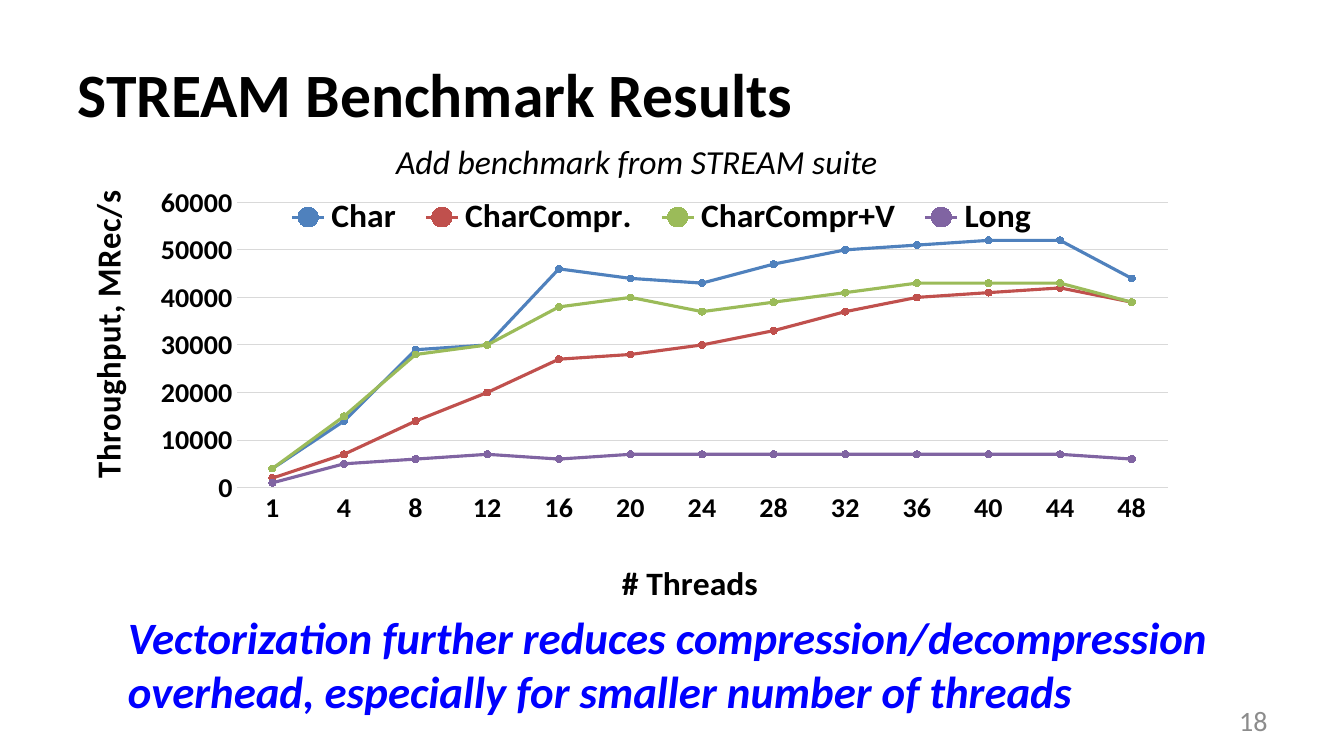
from lxml import etree
from pptx import Presentation
from pptx import util as u
from pptx.chart.data import CategoryChartData
from pptx.dml.color import RGBColor
from pptx.enum import chart as ch
from pptx.enum import text
from pptx.oxml.ns import qn

FONT = "Calibri"
BLACK = RGBColor(0, 0, 0)
BLUE = RGBColor(0, 0, 255)
GRAY = RGBColor(0x8C, 0x8C, 0x8C)
GRID = RGBColor(0xD9, 0xD9, 0xD9)

TITLE = "STREAM Benchmark Results"
TITLE_BOX = (0.67, 0.3, 12, 1.25)
NOTES = [
    ("Add benchmark from STREAM suite", (3.83, 1.35, 5.67, 0.5),
     dict(size=24, color=BLACK, italic=True)),
    ("Vectorization further reduces compression/decompression overhead, "
     "especially for smaller number of threads", (1.17, 6, 11.36, 1.18),
     dict(size=32, color=BLUE, bold=True, italic=True)),
]
PAGE = ("18", (9.56, 6.95, 3.11, 0.4), dict(size=20, color=GRAY))

CHART_BOX = (0.67, 1.79, 11.33, 4.31)
THREADS = [1] + list(range(4, 49, 4))
THROUGHPUT = {
    "Char": (RGBColor(0x4F, 0x81, 0xBD),
             [4, 14, 29, 30, 46, 44, 43, 47, 50, 51, 52, 52, 44]),
    "CharCompr.": (RGBColor(0xC0, 0x50, 0x4D),
                   [2, 7, 14, 20, 27, 28, 30, 33, 37, 40, 41, 42, 39]),
    "CharCompr+V": (RGBColor(0x9B, 0xBB, 0x59),
                    [4, 15, 28, 30, 38, 40, 37, 39, 41, 43, 43, 43, 39]),
    "Long": (RGBColor(0x80, 0x64, 0xA2),
             [1, 5, 6, 7, 6, 7, 7, 7, 7, 7, 7, 7, 6]),
}


def style(font, size, color=BLACK, bold=False, italic=False):
    font.name, font.size = FONT, u.Pt(size)
    font.bold, font.italic = bold, italic
    font.color.rgb = color


def inches(box):
    return [u.Inches(v) for v in box]


def add_text(s, words, box, look):
    tf = s.shapes.add_textbox(*inches(box)).text_frame
    tf.word_wrap = True
    tf.text = words
    style(tf.paragraphs[0].runs[0].font, **look)
    return tf


def place(element, index, x, y, w=None, h=None, inner=False):
    for old in element.findall(qn("c:layout")):
        element.remove(old)
    layout = etree.Element(qn("c:layout"))
    manual = etree.SubElement(layout, qn("c:manualLayout"))
    parts = [("layoutTarget", "inner")] if inner else []
    parts += [("xMode", "edge"), ("yMode", "edge"), ("x", x), ("y", y)]
    if w:
        parts += [("w", w), ("h", h)]
    for tag, value in parts:
        etree.SubElement(manual, qn("c:" + tag)).set("val", str(value))
    element.insert(index, layout)


def style_axis(axis, words, x, y):
    axis.major_tick_mark = axis.minor_tick_mark = ch.XL_TICK_MARK.NONE
    style(axis.tick_labels.font, 20, bold=True)
    tf = axis.axis_title.text_frame
    tf.text = words
    style(tf.paragraphs[0].runs[0].font, 24, bold=True)
    place(axis.axis_title._element, 1, x, y)


def add_throughput_chart(s):
    data = CategoryChartData(number_format="0")
    data.categories = [str(n) for n in THREADS]
    for name, (_, thousands) in THROUGHPUT.items():
        data.add_series(name, [v * 1000 for v in thousands])
    chart = s.shapes.add_chart(ch.XL_CHART_TYPE.LINE_MARKERS,
                               *inches(CHART_BOX), data).chart
    chart.has_title = False
    style(chart.font, 10)
    place(chart._chartSpace.chart.plotArea, 0, 0.148, 0.052, 0.815, 0.677, True)

    cat, val = chart.category_axis, chart.value_axis
    style_axis(cat, "# Threads", 0.48, 0.89)
    style_axis(val, "Throughput, MRec/s", 0.01, 0.03)
    val.minimum_scale, val.maximum_scale, val.major_unit = 0, 60000, 10000
    val.format.line.fill.background()
    for line in (cat.format.line, val.major_gridlines.format.line):
        line.color.rgb, line.width = GRID, u.Pt(0.75)

    chart.has_legend = True
    legend = chart.legend
    legend.position = ch.XL_LEGEND_POSITION.BOTTOM
    legend.include_in_layout = True
    style(legend.font, 24, bold=True)
    place(legend._element, 1, 0.18, 0.04, 0.68, 0.09)

    plot = chart.plots[0]
    plot.vary_by_categories = False
    for series, (color, _) in zip(plot.series, THROUGHPUT.values()):
        series.smooth = False
        series.format.line.color.rgb = color
        series.format.line.width = u.Pt(2.25)
        marker = series.marker
        marker.style, marker.size = ch.XL_MARKER_STYLE.CIRCLE, 5
        marker.format.fill.solid()
        marker.format.fill.fore_color.rgb = color
        marker.format.line.color.rgb = color


def main():
    prs = Presentation()
    prs.slide_width, prs.slide_height = u.Inches(13.33), u.Inches(7.5)
    s = prs.slides.add_slide(prs.slide_layouts[5])

    title = s.shapes.title
    title.left, title.top, title.width, title.height = inches(TITLE_BOX)
    tf = title.text_frame
    tf.text = TITLE
    tf.vertical_anchor = text.MSO_ANCHOR.MIDDLE
    tf.paragraphs[0].alignment = text.PP_ALIGN.LEFT
    style(tf.paragraphs[0].runs[0].font, 44, bold=True)

    tf = add_text(s, *PAGE)
    tf.vertical_anchor = text.MSO_ANCHOR.MIDDLE
    tf.paragraphs[0].alignment = text.PP_ALIGN.RIGHT

    add_throughput_chart(s)
    for note in NOTES:
        add_text(s, *note)
    prs.save("out.pptx")


if __name__ == "__main__":
    main()
